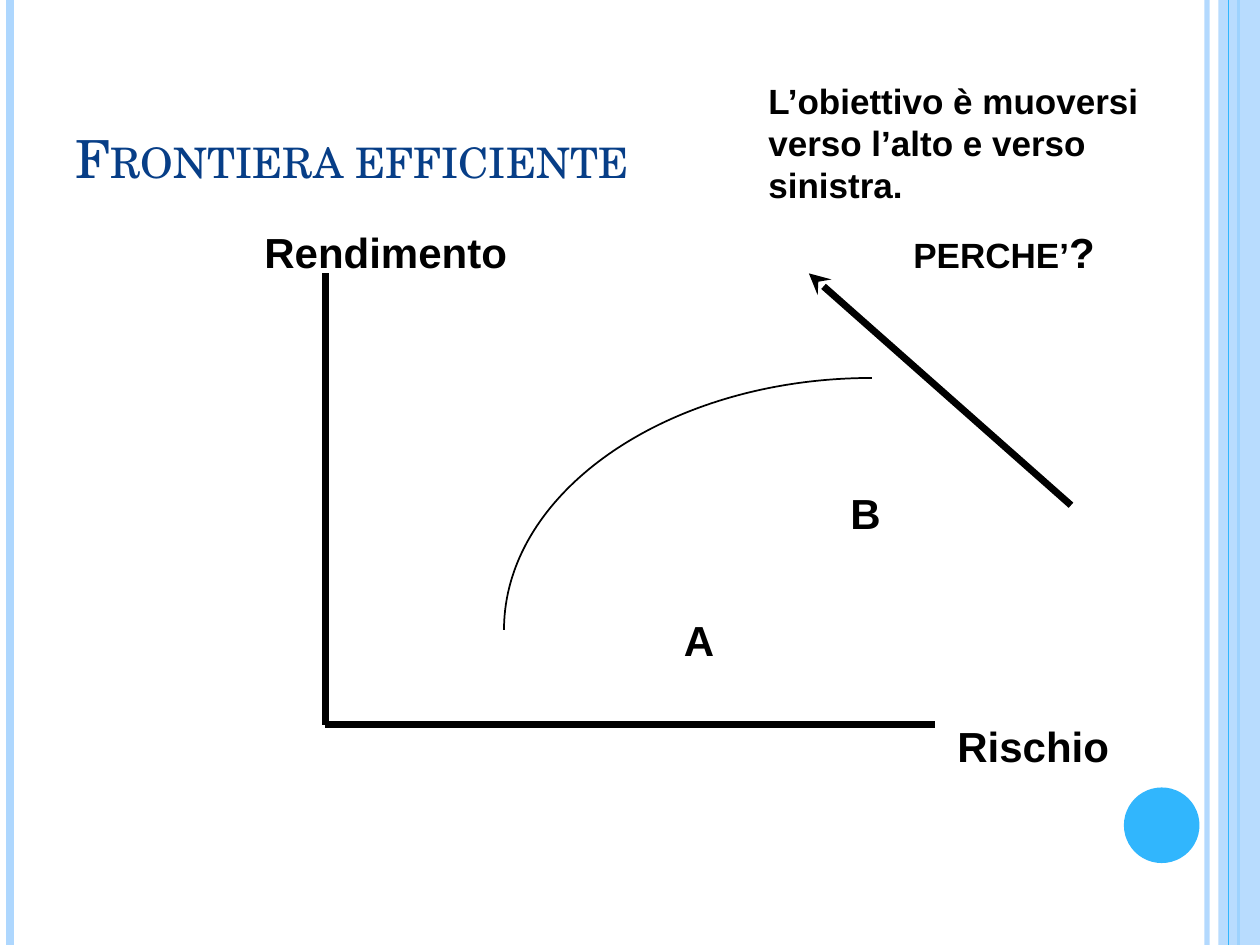
from pptx import Presentation
from pptx.dml.color import RGBColor
from pptx.enum.shapes import MSO_CONNECTOR, MSO_SHAPE
from pptx.enum.text import MSO_ANCHOR, MSO_AUTO_SIZE
from pptx.oxml import parse_xml
from pptx.oxml.ns import nsdecls, qn
from pptx.util import Inches, Pt
from lxml.etree import SubElement

WIDTH, HEIGHT = 10, 7.5
PALE, BRIGHT, NAVY, BLACK = "AED7FE", "31B6FD", "073E87", "000000"

# Vertical stripes: x, colour, width in points, opacity in percent
STRIPES_BEHIND = [(9.58, PALE, 3, 93), (0.08, PALE, 4.5, 100), (9.83, BRIGHT, 1.5, 100)]
STRIPE_FRONT = (9.75, BRIGHT, 0.75, 100)
BAND = (9.67, 0, 0.33, HEIGHT)
DOT = (8.92, 6.25, 0.6, 0.6)

TITLE = "Frontiera efficiente"
LABELS = [
    ("A", (5.33, 4.83, 0.5, 0.5)),
    ("B", (6.65, 3.82, 0.44, 0.5)),
    ("Rendimento", (2, 1.75, 2.42, 0.5)),
    ("Rischio", (7.5, 5.67, 1.67, 0.5)),
]
GOAL = "L’obiettivo è muoversi verso l’alto e verso sinistra."
QUESTION = [("PERCHE’", 20), ("?", 24)]

ORIGIN, RETURN_END, RISK_END = (2.58, 5.75), (2.58, 2.17), (7.42, 5.75)
ARROW = ((8.5, 4.01), (6.42, 2.17))
CURVE = [(4, 5), (4, 3.9), (5.31, 3), (6.92, 3)]  # start, two controls, end


def paint(color_format, color, opacity=100):
    color_format.rgb = RGBColor.from_string(color)
    if opacity < 100:
        for node in color_format._xFill.iter(qn("a:srgbClr")):
            SubElement(node, qn("a:alpha"), val=str(opacity * 1000))


def add_line(page, start, end, color, width, opacity=100, arrow=False):
    line = page.shapes.add_connector(
        MSO_CONNECTOR.STRAIGHT, *[Inches(v) for v in (*start, *end)])
    line.line.width = Pt(width)
    line.line.fill.solid()
    paint(line.line.fill.fore_color, color, opacity)
    if arrow:
        SubElement(line.line._get_or_add_ln(), qn("a:tailEnd"), type="stealth")
    SubElement(line._element.spPr, qn("a:effectLst"))


def add_stripe(page, x, color, width, opacity):
    add_line(page, (x, 0), (x, HEIGHT), color, width, opacity)


def add_filled(page, kind, place, color, opacity=100):
    shape = page.shapes.add_shape(kind, *[Inches(v) for v in place])
    shape.shadow.inherit = False
    shape.fill.solid()
    paint(shape.fill.fore_color, color, opacity)
    shape.line.fill.background()


def add_box(page, place):
    box = page.shapes.add_textbox(*[Inches(v) for v in place])
    box.text_frame.word_wrap = True
    return box.text_frame


def add_span(para, text, size, font="Arial", color=BLACK, bold=True):
    span = para.add_run()
    span.text = text
    span.font.size, span.font.name, span.font.bold = Pt(size), font, bold
    paint(span.font.color, color)
    return span


def add_curve(page, points):
    """Open freeform whose single segment is a cubic curve."""
    start, end = points[0], points[-1]
    builder = page.shapes.build_freeform(*[Inches(v) for v in start], scale=1.0)
    builder.add_line_segments([[Inches(v) for v in end]], close=False)
    curve = builder.convert_to_shape()
    left, top = start[0], end[1]
    marks = "".join(
        f'<a:pt x="{Inches(x - left)}" y="{Inches(y - top)}"/>' for x, y in points[1:])
    segment = next(curve._element.iter(qn("a:lnTo")))
    segment.getparent().replace(segment, parse_xml(
        f'<a:cubicBezTo {nsdecls("a")}>{marks}</a:cubicBezTo>'))
    curve.shadow.inherit = False
    curve.fill.background()
    curve.line.width = Pt(1)
    curve.line.fill.solid()
    paint(curve.line.fill.fore_color, BLACK)


def main():
    deck = Presentation()
    deck.slide_width, deck.slide_height = Inches(WIDTH), Inches(HEIGHT)
    page = deck.slides.add_slide(deck.slide_layouts[6])

    # Side decoration
    for stripe in STRIPES_BEHIND:
        add_stripe(page, *stripe)
    add_filled(page, MSO_SHAPE.RECTANGLE, BAND, PALE, 87)
    add_stripe(page, *STRIPE_FRONT)
    add_filled(page, MSO_SHAPE.OVAL, DOT, BRIGHT)

    # Title in small capitals
    frame = add_box(page, (0.5, 0.3, 8.17, 1.25))
    frame.vertical_anchor = MSO_ANCHOR.BOTTOM
    span = add_span(frame.paragraphs[0], TITLE, 30, "TeX Gyre Schola", NAVY, False)
    span.font._element.set("cap", "small")

    # Axes and efficient frontier
    add_line(page, RETURN_END, ORIGIN, BLACK, 4)
    add_line(page, ORIGIN, RISK_END, BLACK, 4)
    add_curve(page, CURVE)

    # Axis and point labels
    for text, place in LABELS:
        frame = add_box(page, place)
        frame.auto_size = MSO_AUTO_SIZE.SHAPE_TO_FIT_TEXT
        add_span(frame.paragraphs[0], text, 24)

    # Direction of improvement and its comment
    add_line(page, *ARROW, BLACK, 4, arrow=True)
    frame = add_box(page, (6, 0.58, 3.33, 1.7))
    add_span(frame.paragraphs[0], GOAL, 20)
    para = frame.add_paragraph()
    para.space_before = Pt(12)
    para._p.get_or_add_pPr().set("indent", str(Inches(1.15)))
    for text, size in QUESTION:
        add_span(para, text, size)

    deck.save("out.pptx")


if __name__ == "__main__":
    main()
